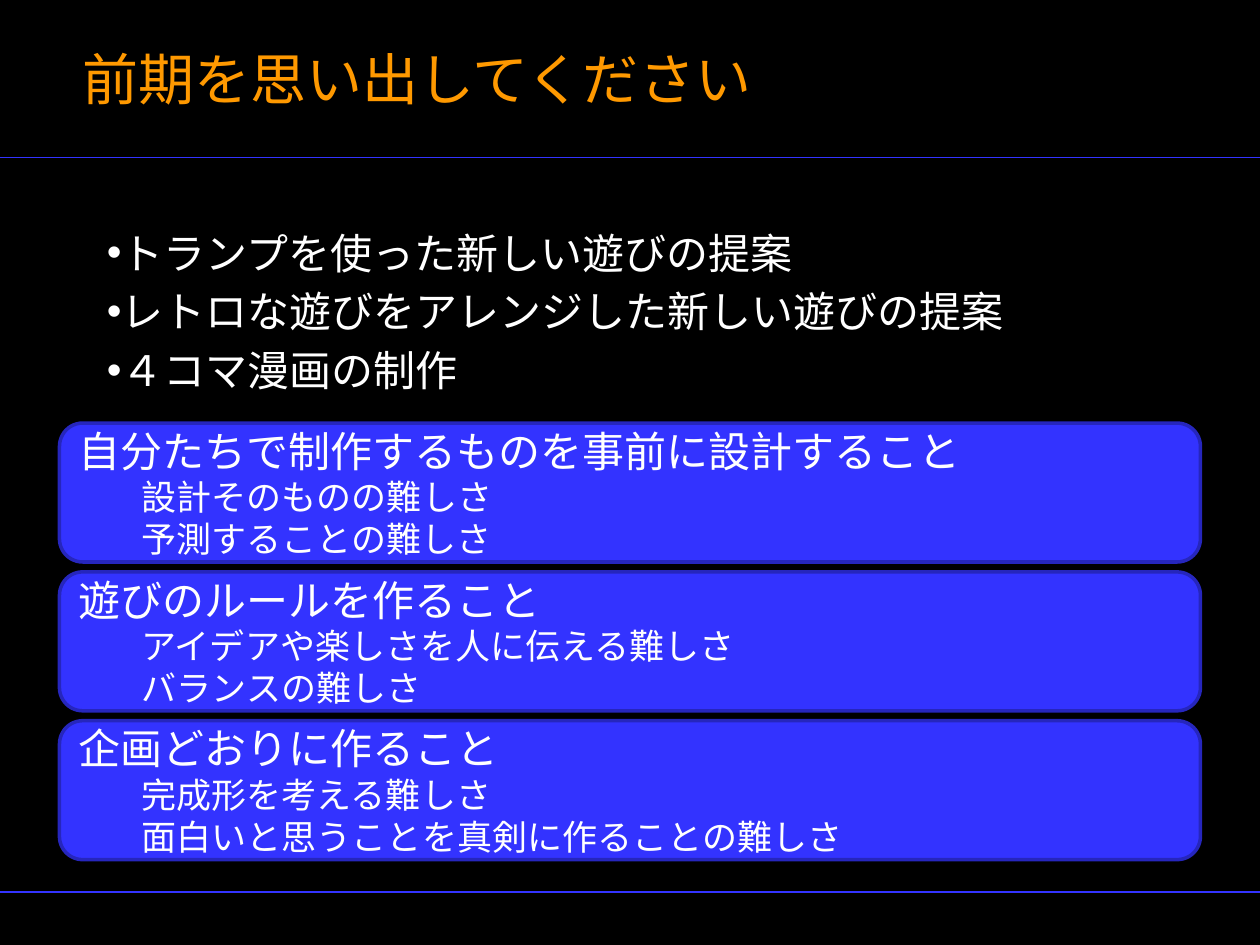
from lxml import etree
from pptx import Presentation
from pptx.dml.color import RGBColor
from pptx.enum.shapes import MSO_CONNECTOR, MSO_SHAPE
from pptx.enum.text import MSO_ANCHOR, PP_ALIGN
from pptx.oxml.ns import qn
from pptx.util import Cm, Pt

STRAIGHT = MSO_CONNECTOR.STRAIGHT
ROUNDED = MSO_SHAPE.ROUNDED_RECTANGLE
TOP, MIDDLE = MSO_ANCHOR.TOP, MSO_ANCHOR.MIDDLE
LEFT = PP_ALIGN.LEFT

BLACK = RGBColor(0x00, 0x00, 0x00)
WHITE = RGBColor(0xFF, 0xFF, 0xFF)
ORANGE = RGBColor(0xFF, 0x99, 0x00)
BLUE = RGBColor(0x33, 0x33, 0xFF)
DARK_BLUE = RGBColor(0x26, 0x26, 0xBD)
FONT = "Noto Sans CJK JP"

ASSIGNMENTS = [
    "トランプを使った新しい遊びの提案",
    "レトロな遊びをアレンジした新しい遊びの提案",
    "４コマ漫画の制作",
]
LESSONS = [
    ["自分たちで制作するものを事前に設計すること", "設計そのものの難しさ", "予測することの難しさ"],
    ["遊びのルールを作ること", "アイデアや楽しさを人に伝える難しさ", "バランスの難しさ"],
    ["企画どおりに作ること", "完成形を考える難しさ", "面白いと思うことを真剣に作ることの難しさ"],
]


def format_para(para, size, color, margin=0):
    para.alignment = LEFT
    properties = para._p.get_or_add_pPr()
    properties.set("marL", str(margin))
    properties.set("indent", "0")
    for span in para.runs:
        span.font.size = Pt(size)
        span.font.color.rgb = color
        span.font.name = FONT
        latin = span._r.rPr.find(qn("a:latin"))
        east_asian = etree.Element(qn("a:ea"), typeface=FONT)
        latin.addnext(east_asian)


def place(shape, left, top, width, height):
    shape.left, shape.top = Cm(left), Cm(top)
    shape.width, shape.height = Cm(width), Cm(height)


deck = Presentation()
deck.slide_width, deck.slide_height = Cm(25.4), Cm(19.05)
page = deck.slides.add_slide(deck.slide_layouts[1])
page.background.fill.solid()
page.background.fill.fore_color.rgb = BLACK

for y in (3.17, 17.98):
    rule = page.shapes.add_connector(STRAIGHT, 0, Cm(y), Cm(25.4), Cm(y))
    rule.line.color.rgb = BLUE
    rule.line.width = Pt(0.75)
    etree.SubElement(rule._element.spPr, qn("a:effectLst"))

title = page.shapes.title
place(title, 1.4, 0, 22.8, 3.17)
title.text_frame.text = "前期を思い出してください"
title.text_frame.vertical_anchor = MIDDLE
format_para(title.text_frame.paragraphs[0], 32, ORANGE)

body = page.placeholders[1]
place(body, 1.9, 4.45, 21.6, 12.5)
body.text_frame.text = "\n".join(ASSIGNMENTS)
body.text_frame.vertical_anchor = TOP
for para in body.text_frame.paragraphs:
    format_para(para, 24, WHITE)

for index, lines in enumerate(LESSONS):
    box = page.shapes.add_shape(ROUNDED, Cm(1.2), Cm(8.53 + 3 * index), Cm(23), Cm(2.8))
    box.shadow.inherit = False
    box.fill.solid()
    box.fill.fore_color.rgb = BLUE
    box.line.color.rgb = DARK_BLUE
    box.line.width = Pt(2)
    box.text_frame.text = "\n".join(lines)
    box.text_frame.vertical_anchor = MIDDLE
    heading, *details = box.text_frame.paragraphs
    format_para(heading, 24, WHITE)
    for para in details:
        para.level = 1
        format_para(para, 20, WHITE, Cm(1.27))

deck.save("out.pptx")
